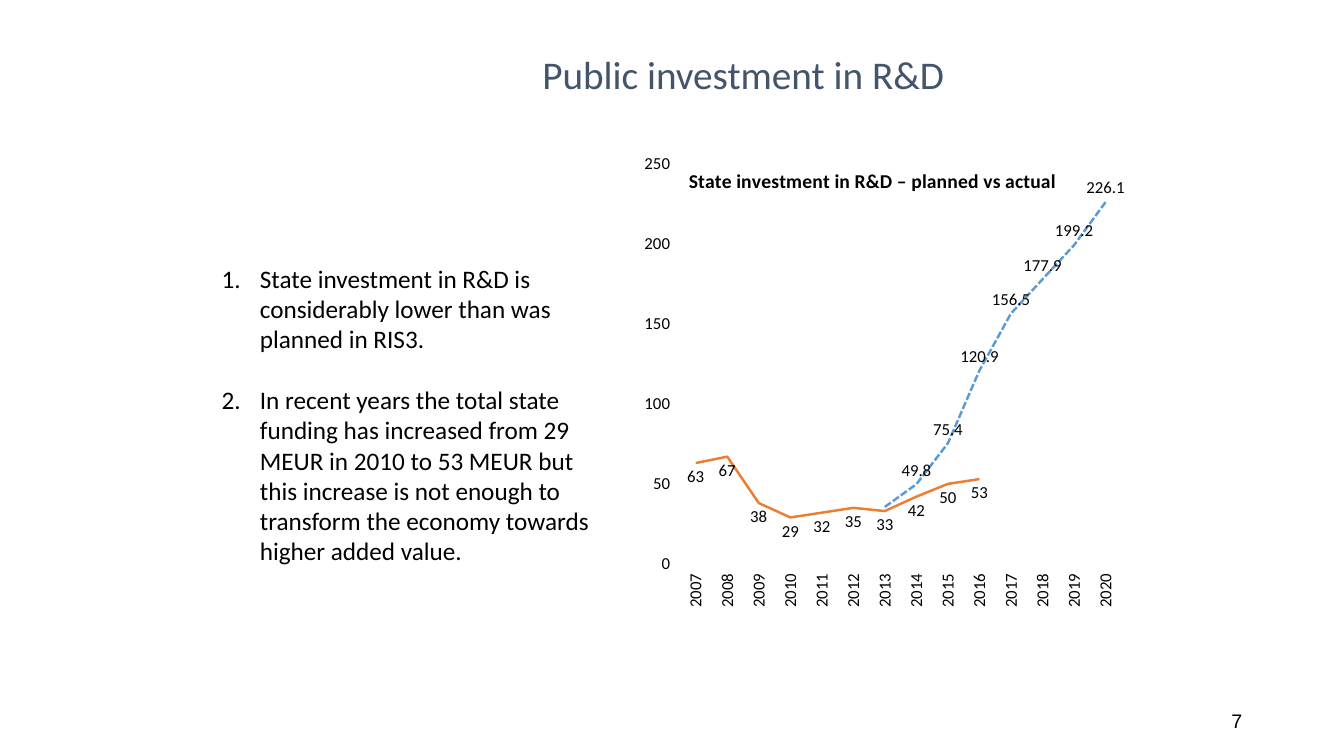
from dataclasses import dataclass
from lxml.etree import SubElement
from pptx import Presentation
from pptx.chart.data import CategoryChartData as Data
from pptx.dml.color import RGBColor as Color
from pptx.enum.chart import XL_CHART_TYPE as Kind, XL_LABEL_POSITION as Spot
from pptx.enum.chart import XL_TICK_LABEL_POSITION as Tick, XL_MARKER_STYLE as Mark
from pptx.enum.chart import XL_TICK_MARK as Dash
from pptx.enum.dml import MSO_LINE as Line
from pptx.enum.text import MSO_ANCHOR as Anchor, PP_ALIGN as Align
from pptx.oxml import parse_xml as to_xml
from pptx.oxml.ns import nsdecls, qn
from pptx.util import Inches, Pt


@dataclass(frozen=True)
class Theme:
    """Colours, fonts and type sizes of the slide."""
    ink: str = "000000"
    slate: str = "44546A"
    orange: str = "ED7D31"
    blue: str = "5B9BD5"
    face: str = "Calibri"
    plain: str = "Arial"
    head: int = 28
    body: int = 18
    label: int = 14
    small: int = 12


LOOK = Theme()
WIDE, HIGH = Inches(13.33), Inches(7.5)
HEAD = "Public investment in R&D"
NOTES = [
    "State investment in R&D is considerably lower than was planned in RIS3.",
    "In recent years the total state funding has increased from 29 MEUR in 2010 "
    "to 53 MEUR but this increase is not enough to transform the economy "
    "towards higher added value.",
]
YEARS = [str(year) for year in range(2007, 2021)]
ACTUAL = [63, 67, 38, 29, 32, 35, 33, 42, 50, 53] + [None] * 4
PLAN = [None] * 6 + [35.6, 49.8, 75.4, 120.9, 156.5, 177.9, 199.2, 226.1]


def grid(left, top, cols, rows):
    """Turn cells of a 100 by 100 grid into slide lengths."""
    return [round(part * side / 100) for part, side in
            zip((left, top, cols, rows), (WIDE, HIGH) * 2)]


def style(font, size, color=LOOK.ink, face=LOOK.face, bold=False):
    """Set the size, colour, face and weight of a font."""
    font.size, font.name, font.bold = Pt(size), face, bold
    font.color.rgb = Color.from_string(color)


def add_head(slide, text, place):
    """Move, fill and format the title."""
    title = slide.shapes.title
    title.left, title.top, title.width, title.height = place
    frame = title.text_frame
    frame.text, frame.vertical_anchor = text, Anchor.TOP
    para = frame.paragraphs[0]
    para.alignment = Align.CENTER
    style(para.font, LOOK.head, LOOK.slate)


def add_list(slide, items, place):
    """Add a numbered list with a gap between its items."""
    frame = slide.shapes.add_textbox(*place).text_frame
    frame.word_wrap = True
    for index, item in enumerate(items):
        para = frame.add_paragraph() if index else frame.paragraphs[0]
        para.text = item
        style(para.font, LOOK.body)
        para.space_before = Pt(22 if index else 0)
        props = para._p.get_or_add_pPr()
        props.set("marL", str(Inches(0.38)))
        props.set("indent", str(-Inches(0.38)))
        SubElement(props, qn("a:buFont"), typeface="+mj-lt")
        SubElement(props, qn("a:buAutoNum"), type="arabicPeriod")


def add_page(slide, text, place):
    """Add the page number at the lower right."""
    frame = slide.shapes.add_textbox(*place).text_frame
    frame.word_wrap, frame.vertical_anchor = True, Anchor.MIDDLE
    para = frame.paragraphs[0]
    para.text, para.alignment = text, Align.RIGHT
    style(para.font, LOOK.label, face=LOOK.plain)


def pin(node, index, inner=False, **parts):
    """Give a chart part a manual layout as shares of the chart."""
    for old in node.findall(qn("c:layout")):
        node.remove(old)
    target = '<c:layoutTarget val="inner"/>' if inner else ""
    modes = "".join(f'<c:{key}Mode val="edge"/>' for key in "xy")
    sizes = "".join(f'<c:{key} val="{val}"/>' for key, val in parts.items())
    node.insert(index, to_xml(
        f'<c:layout {nsdecls("c")}><c:manualLayout>{target}{modes}{sizes}'
        '</c:manualLayout></c:layout>'))


def set_axis(axis):
    """Show tick labels only, without lines or grid."""
    axis.has_major_gridlines = False
    axis.major_tick_mark = Dash.OUTSIDE
    axis.tick_label_position = Tick.LOW
    axis.format.line.fill.background()
    style(axis.tick_labels.font, LOOK.small)


def set_line(line, color, spot, form, dash=None):
    """Format one line and its value labels."""
    line.smooth = False
    line.marker.style = Mark.NONE
    pen = line.format.line
    pen.width, pen.color.rgb = Pt(1.75), Color.from_string(color)
    if dash:
        pen.dash_style = dash
    tags = line.data_labels
    tags.show_value, tags.position = True, spot
    tags.number_format, tags.number_format_is_linked = form, False
    style(tags.font, LOOK.small)


def hide_tag(line, index):
    """Hide the label of one point."""
    line.data_labels._element.insert(0, to_xml(
        f'<c:dLbl {nsdecls("c")}><c:idx val="{index}"/>'
        '<c:delete val="1"/></c:dLbl>'))


def add_plot(slide, place):
    """Add the line chart of planned and actual investment."""
    data = Data()
    data.categories = YEARS
    data.add_series("Actual", ACTUAL)
    data.add_series("Planned", PLAN)
    chart = slide.shapes.add_chart(Kind.LINE, *place, data).chart
    style(chart.font, LOOK.small)
    chart.has_legend = False
    chart.has_title = True
    title = chart.chart_title
    title.text_frame.text = "State investment in R&D – planned vs actual"
    style(title.text_frame.paragraphs[0].font, LOOK.label, bold=True)
    pin(title._element, 1, x=0.13, y=0.04)
    title._element.find(qn("c:overlay")).set("val", "1")
    area = chart._chartSpace.chart.plotArea
    pin(area, 0, True, x=0.12, y=0.04, w=0.84, h=0.81)

    years, money = chart.category_axis, chart.value_axis
    for axis in (years, money):
        set_axis(axis)
    years._element.find(qn("c:txPr")).find(qn("a:bodyPr")).set("rot", "-5400000")
    money.minimum_scale, money.maximum_scale, money.major_unit = 0, 250, 50
    money.tick_labels.number_format = "0"
    money.tick_labels.number_format_is_linked = False

    plot = chart.plots[0]
    plot.vary_by_categories = False
    actual, plan = plot.series
    set_line(actual, LOOK.orange, Spot.BELOW, "#,##0")
    set_line(plan, LOOK.blue, Spot.ABOVE, "General", Line.SQUARE_DOT)
    hide_tag(plan, PLAN.index(35.6))


def main():
    """Build and save the slide."""
    deck = Presentation()
    deck.slide_width, deck.slide_height = WIDE, HIGH
    slide = deck.slides.add_slide(deck.slide_layouts[5])
    add_page(slide, "7", grid(70.67, 92.67, 22.5, 5.33))
    add_head(slide, HEAD, grid(30.3, 6, 50, 15))
    add_plot(slide, grid(45.9, 19.07, 39.1, 65.33))
    add_list(slide, NOTES, grid(15.75, 34.13, 29.25, 44.93))
    deck.save("out.pptx")


if __name__ == "__main__":
    main()
